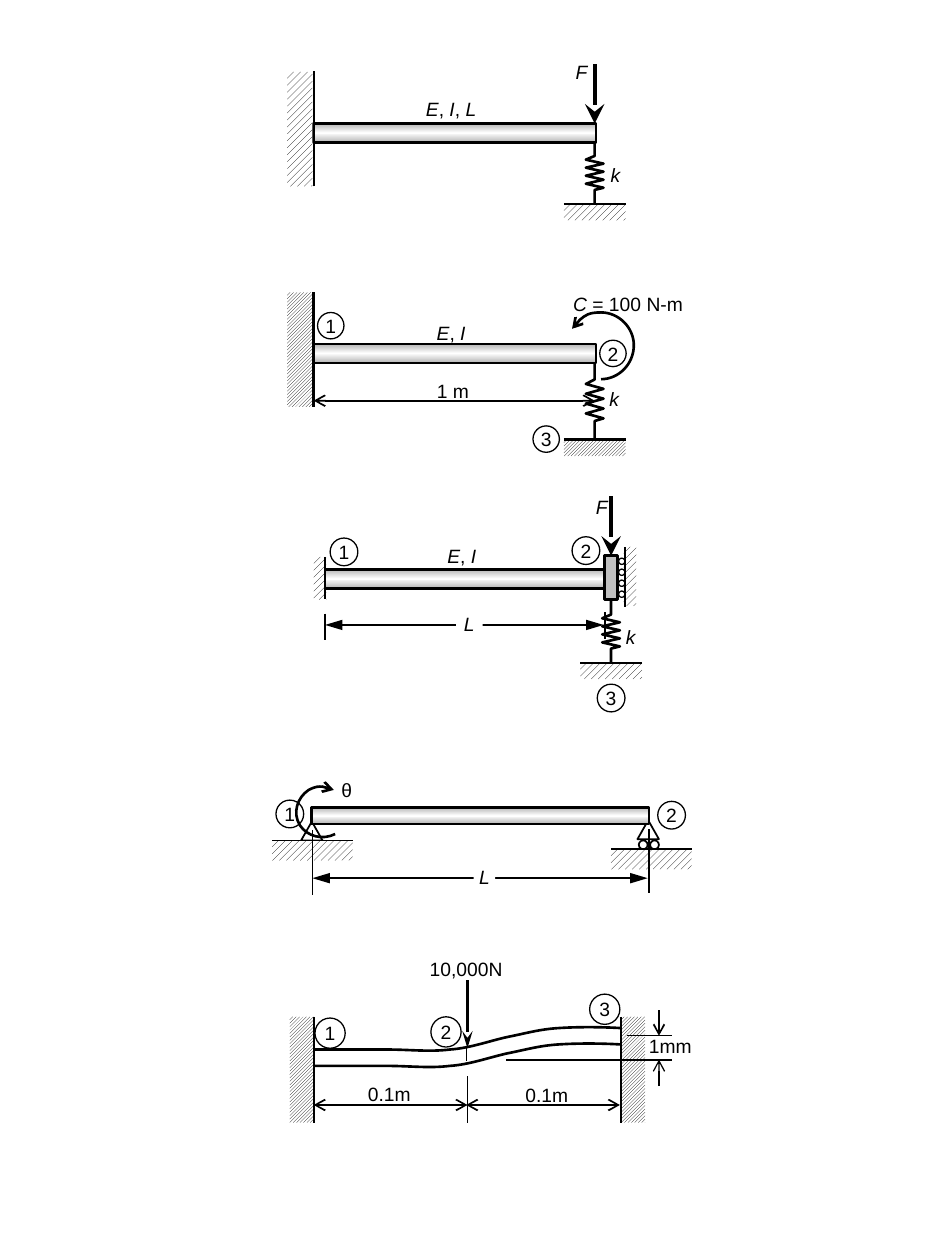
import copy

import pptx
from pptx.dml.color import RGBColor
from pptx.enum.dml import MSO_PATTERN
from pptx.enum.shapes import MSO_CONNECTOR, MSO_SHAPE
from pptx.enum.text import MSO_ANCHOR, PP_ALIGN
from pptx.oxml.ns import qn
from pptx.oxml.xmlchemy import OxmlElement

THEME = {
    "font": "Arial", "size": 11, "ink": "000000", "paper": "FFFFFF", "slider": "C0C0C0",
    "edge_shade": 46275, "thin": 0.75, "line": 1, "bold": 1.5, "load": 2.25,
}
PATTERNS = {
    "wide": MSO_PATTERN.WIDE_UPWARD_DIAGONAL,
    "light": MSO_PATTERN.LIGHT_UPWARD_DIAGONAL,
    "dark": MSO_PATTERN.DARK_UPWARD_DIAGONAL,
}
# Arrowheads: type, width, length.
OPEN = ("arrow", "med", "med")
FILLED = ("triangle", "med", "lg")
FORCE = ("stealth", "lg", "lg")
SLIM_FORCE = ("stealth", "med", "lg")

# Places are inches: boxes are left, top, width, height; asterisks mark italics.
SPRING_BEAM = [
    ("beam", (2.49, 0.98, 2.24, 0.15)),
    ("hatch", (2.28, 0.57, 0.2, 0.91), "wide"),
    ("line", (2.49, 1.48), (2.49, 0.56)),
    ("line", (4.72, 0.51), (4.72, 0.98), "load", None, FORCE),
    ("label", "*F*", (4.54, 0.48, 0.15, 0.14)),
    ("label", "*E*, *I*, *L*", (3.27, 0.77, 0.62, 0.14)),
    ("ground", 4.72, 1.62, 0.49, 0.13),
    ("spring", 4.72, 1.13, 1.62),
    ("label", "*k*", (4.81, 1.3, 0.15, 0.14)),
]
COUPLE_BEAM = [
    ("label", "1 m", (3.43, 3.01, 0.33, 0.17)),
    ("node", "1", 2.52, 2.48, 0.21, None),
    ("node", "2", 4.76, 2.7, 0.21, None),
    ("node", "3", 4.23, 3.38, 0.21, None),
    ("line", (2.49, 3.18), (4.72, 3.18), "line", OPEN, OPEN),
    ("beam", (2.49, 2.73, 2.24, 0.15)),
    ("hatch", (2.28, 2.32, 0.2, 0.91), "light"),
    ("line", (2.49, 3.23), (2.49, 2.32), "bold"),
    ("label", "*C* = 100 N-m", (4.54, 2.32, 0.89, 0.19)),
    ("label", "*E*, *I*", (3.27, 2.55, 0.62, 0.14)),
    ("ground", 4.72, 3.49, 0.49, 0.13, "light", "bold"),
    ("spring", 4.72, 2.88, 3.48),
    ("label", "*k*", (4.8, 3.07, 0.15, 0.14)),
    ("curve", [(4.77, 3.01), (4.91, 3.01), (5.03, 2.89), (5.03, 2.74), (5.03, 2.6),
               (4.91, 2.48), (4.77, 2.48), (4.67, 2.48), (4.59, 2.53), (4.54, 2.61)], OPEN),
]
GUIDED_BEAM = [
    ("hatch", (4.95, 4.34, 0.1, 0.47), "wide"),
    ("hatch", (2.49, 4.42, 0.1, 0.34), "wide"),
    ("beam", (2.58, 4.52, 2.23, 0.15)),
    ("line", (2.58, 4.87), (2.58, 5.08)),
    ("line", (4.8, 4.86), (4.8, 5.07)),
    ("line", (2.58, 4.96), (4.79, 4.96), "line", FILLED, FILLED),
    ("label", "*L*", (3.62, 4.86, 0.21, 0.21), "paper"),
    ("solid", MSO_SHAPE.RECTANGLE, (4.8, 4.41, 0.1, 0.35), "slider", "bold"),
    *[("solid", MSO_SHAPE.OVAL, (4.91, 4.43 + 0.087 * i, 0.05, 0.05), "paper", "thin")
      for i in range(4)],
    ("line", (4.96, 4.34), (4.96, 4.82)),
    ("line", (2.58, 4.42), (2.58, 4.75)),
    ("node", "1", 2.62, 4.27, 0.22),
    ("node", "2", 4.54, 4.26, 0.22),
    ("label", "*E*, *I*", (3.5, 4.32, 0.33, 0.21)),
    ("line", (4.85, 3.94), (4.85, 4.41), "load", None, FORCE),
    ("label", "*F*", (4.7, 3.93, 0.15, 0.14)),
    ("ground", 4.85, 5.26, 0.49, 0.13),
    ("spring", 4.85, 4.77, 5.26),
    ("label", "*k*", (4.93, 4.96, 0.15, 0.14)),
    ("node", "3", 4.74, 5.43, 0.22),
]
SIMPLE_BEAM = [
    ("solid", MSO_SHAPE.OVAL, (5.07, 6.67, 0.07, 0.07), "paper", "line"),
    ("solid", MSO_SHAPE.ISOSCELES_TRIANGLE, (5.06, 6.51, 0.17, 0.15), "paper", "line"),
    ("solid", MSO_SHAPE.OVAL, (5.16, 6.67, 0.07, 0.07), "paper", "line"),
    ("ground", 5.17, 6.74, 0.64, 0.16),
    ("solid", MSO_SHAPE.ISOSCELES_TRIANGLE, (2.39, 6.52, 0.17, 0.15), "paper", "line"),
    ("ground", 2.48, 6.67, 0.64, 0.16),
    ("line", (2.48, 6.59), (2.48, 7.1)),
    ("line", (5.15, 6.58), (5.15, 7.09)),
    ("line", (2.48, 6.97), (5.14, 6.97), "line", FILLED, FILLED),
    ("label", "*L*", (3.76, 6.87, 0.17, 0.19), "paper"),
    ("beam", (2.47, 6.41, 2.68, 0.13)),
    ("node", "1", 2.19, 6.35, 0.22),
    ("node", "2", 5.22, 6.36, 0.22),
    ("curve", [(2.66, 6.62), (2.56, 6.67), (2.44, 6.64), (2.38, 6.55), (2.32, 6.45),
               (2.36, 6.33), (2.45, 6.27), (2.51, 6.24), (2.59, 6.23), (2.65, 6.27)], OPEN),
    ("label", "θ", (2.71, 6.18, 0.08, 0.19)),
]
BENT_EDGE = [
    (2.49, 8.33), (2.69, 8.33), (2.89, 8.33), (3.07, 8.33), (3.25, 8.33), (3.41, 8.35),
    (3.57, 8.33), (3.73, 8.32), (3.89, 8.26), (4.03, 8.23), (4.18, 8.2), (4.28, 8.17),
    (4.43, 8.16), (4.58, 8.15), (4.76, 8.15), (4.93, 8.16)]
SETTLED_BEAM = [
    ("curve", BENT_EDGE),
    ("curve", [(x, y + 0.13) for x, y in BENT_EDGE]),
    ("line", (3.71, 7.78), (3.71, 8.32), "bold", None, SLIM_FORCE),
    ("line", (3.71, 8.54), (3.71, 8.91)),
    ("hatch", (2.3, 8.07, 0.19, 0.84), "dark"),
    ("line", (2.49, 8.07), (2.49, 8.91)),
    ("hatch", (4.93, 8.07, 0.19, 0.84), "dark"),
    ("line", (4.93, 8.07), (4.93, 8.91)),
    ("line", (4.02, 8.41), (5.33, 8.41)),
    ("line", (4.98, 8.22), (5.33, 8.22), "thin"),
    ("line", (5.23, 8.62), (5.23, 8.41), "thin", None, OPEN),
    ("line", (5.23, 8.02), (5.23, 8.22), "line", None, OPEN),
    ("line", (3.71, 8.77), (2.49, 8.77), "line", OPEN, OPEN),
    ("line", (4.92, 8.77), (3.7, 8.77), "line", OPEN, OPEN),
    ("label", "10,000N", (3.28, 7.6, 0.84, 0.19)),
    ("label", "0.1m", (2.67, 8.59, 0.84, 0.19)),
    ("label", "0.1m", (3.92, 8.6, 0.84, 0.19)),
    ("label", "1mm", (4.99, 8.21, 0.66, 0.19)),
    ("node", "1", 2.5, 8.08, 0.24, None),
    ("node", "2", 3.42, 8.07, 0.24, None),
    ("node", "3", 4.68, 7.89, 0.24, None),
    ("line", (3.7, 8.31), (3.7, 8.42), "thin"),
]
FIGURES = [SPRING_BEAM, COUPLE_BEAM, GUIDED_BEAM, SIMPLE_BEAM, SETTLED_BEAM]


def length(inches):
    return pptx.util.Cm(inches * 2.54)


def color(name):
    return RGBColor.from_string(THEME[name])


def stroke(shape, weight, head=None, tail=None):
    shape.line.color.rgb = color("ink")
    shape.line.width = pptx.util.Pt(THEME[weight])
    for tag, arrow in (("a:headEnd", head), ("a:tailEnd", tail)):
        if arrow:
            end = OxmlElement(tag)
            for key, value in zip(("type", "w", "len"), arrow):
                end.set(key, value)
            shape._element.spPr.find(qn("a:ln")).append(end)


def solid(group, kind, box, fill, weight=None):
    """Add a preset shape; no fill name or no weight leaves that part out."""
    shape = group.shapes.add_shape(kind, *map(length, box))
    shape.shadow.inherit = False
    if fill:
        shape.fill.solid()
        shape.fill.fore_color.rgb = color(fill)
    else:
        shape.fill.background()
    if weight:
        stroke(shape, weight)
    else:
        shape.line.fill.background()
    return shape


def beam(group, box):
    """Add a bar that is shaded at both long edges and bright in the middle."""
    shape = solid(group, MSO_SHAPE.RECTANGLE, box, "paper", "bold")
    shape.fill.gradient()
    shape.fill.gradient_angle = 90
    stops = shape._element.spPr.find(qn("a:gradFill")).find(qn("a:gsLst"))
    stops.append(copy.deepcopy(stops[-1]))
    for stop, place in zip(shape.fill.gradient_stops, (0, 0.5, 1)):
        stop.position = place
        stop.color.rgb = color("paper")
    for edge in (stops[0], stops[-1]):
        shade = OxmlElement("a:shade")
        shade.set("val", str(THEME["edge_shade"]))
        edge[0].append(shade)


def hatch(group, box, pattern):
    fill = solid(group, MSO_SHAPE.RECTANGLE, box, None).fill
    fill.patterned()
    fill.pattern = PATTERNS[pattern]
    fill.fore_color.rgb = color("ink")
    fill.back_color.rgb = color("paper")


def line(group, start, end, weight="line", head=None, tail=None):
    connector = group.shapes.add_connector(MSO_CONNECTOR.STRAIGHT, *map(length, start + end))
    stroke(connector, weight, head, tail)
    connector._element.spPr.append(OxmlElement("a:effectLst"))


def ground(group, center, top, width, depth, pattern="wide", weight="line"):
    left = center - width / 2
    hatch(group, (left, top, width, depth), pattern)
    line(group, (left, top), (left + width, top), weight)


def outline(group, points, tail=None):
    places = [(length(x), length(y)) for x, y in points]
    builder = group.shapes.build_freeform(*places[0])
    builder.add_line_segments(places[1:], close=False)
    shape = builder.convert_to_shape()
    shape.shadow.inherit = False
    shape.fill.background()
    stroke(shape, "bold", tail=tail)
    return shape


def spring(group, x, top, bottom):
    coils = [(-0.07 if i % 2 == 0 else 0.07, 0.28 + 0.065 * i) for i in range(8)]
    steps = [(0, 0), (0, 0.22), *coils, (0, 0.77), (0, 1)]
    outline(group, [(x + dx, top + part * (bottom - top)) for dx, part in steps])


def curve(group, controls, tail=None):
    """Draw joined cubic Bezier pieces: each three segments become one curve."""
    shape = outline(group, controls, tail)
    segments = list(shape._element.spPr.iter(qn("a:lnTo")))
    for i in range(0, len(segments), 3):
        bezier = OxmlElement("a:cubicBezTo")
        segments[i].addprevious(bezier)
        for segment in segments[i:i + 3]:
            bezier.append(segment[0])
            segment.getparent().remove(segment)


def write(shape, text, anchor):
    frame = shape.text_frame
    frame.margin_left = frame.margin_right = frame.margin_top = frame.margin_bottom = 0
    frame.vertical_anchor = anchor
    frame.word_wrap = True
    paragraph = frame.paragraphs[0]
    paragraph.alignment = PP_ALIGN.CENTER
    paragraph.font.name = THEME["font"]
    paragraph.font.size = pptx.util.Pt(THEME["size"])
    paragraph.font.color.rgb = color("ink")
    for i, part in enumerate(text.split("*")):
        if part:
            run = paragraph.add_run()
            run.text = part
            run.font.italic = i % 2 == 1


def label(group, text, box, fill=None):
    if fill:
        shape = solid(group, MSO_SHAPE.RECTANGLE, box, fill)
    else:
        shape = group.shapes.add_textbox(*map(length, box))
    write(shape, text, MSO_ANCHOR.TOP)


def node(group, number, left, top, size, fill="paper"):
    shape = solid(group, MSO_SHAPE.OVAL, (left, top, size, size), fill, "thin")
    write(shape, number, MSO_ANCHOR.MIDDLE)


DRAW = {"solid": solid, "beam": beam, "hatch": hatch, "line": line, "ground": ground,
        "spring": spring, "curve": curve, "label": label, "node": node}
presentation = pptx.Presentation()
presentation.slide_width, presentation.slide_height = length(7.5), length(10)
slide = presentation.slides.add_slide(presentation.slide_layouts[6])
for figure in FIGURES:
    figure_group = slide.shapes.add_group_shape()
    for kind, *details in figure:
        DRAW[kind](figure_group, *details)
presentation.save("out.pptx")
